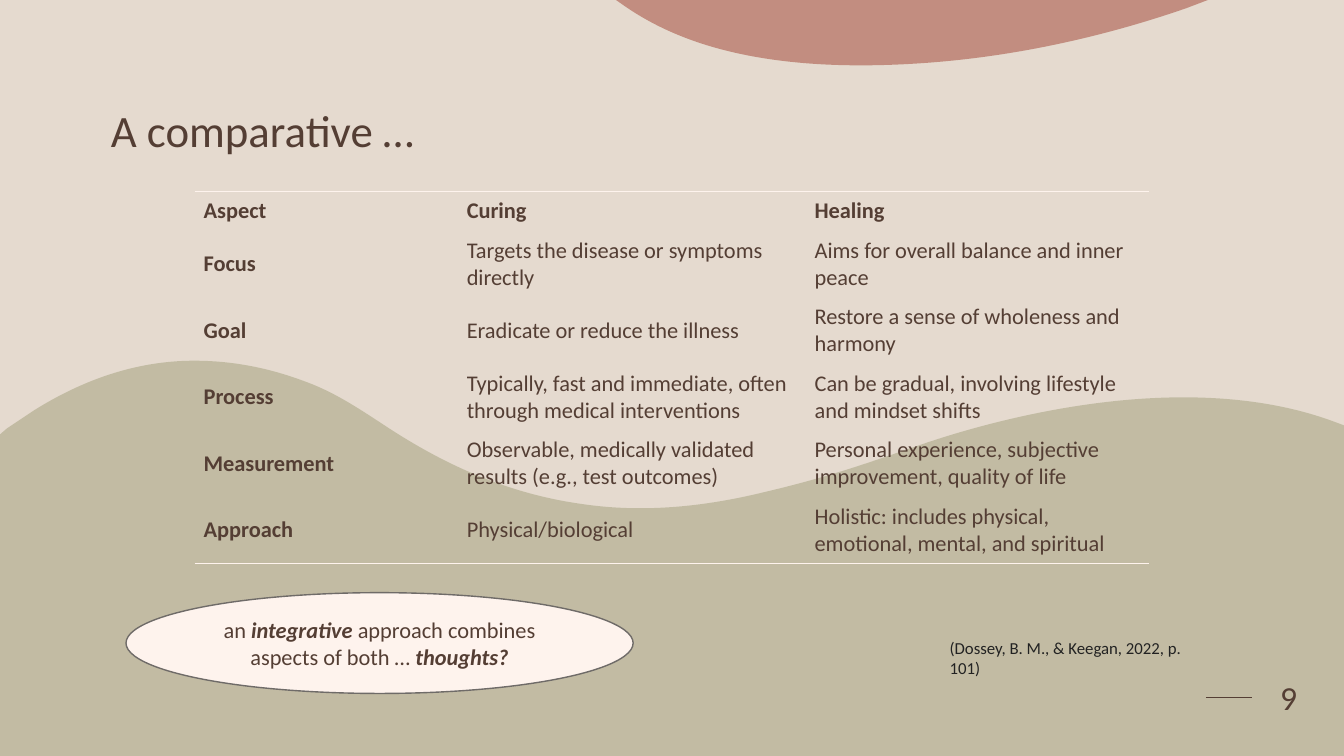
from lxml import etree
from pptx import Presentation
from pptx.dml.color import RGBColor
from pptx.enum.shapes import MSO_CONNECTOR, MSO_SHAPE
from pptx.enum.text import MSO_ANCHOR, PP_ALIGN
from pptx.oxml.ns import qn
from pptx.util import Inches, Pt

LINE, OVAL = MSO_CONNECTOR.STRAIGHT, MSO_SHAPE.OVAL
MIDDLE, BOTTOM = MSO_ANCHOR.MIDDLE, MSO_ANCHOR.BOTTOM
LEFT, CENTER = PP_ALIGN.LEFT, PP_ALIGN.CENTER

SAND = RGBColor(0xE5, 0xDA, 0xCF)
OLIVE = RGBColor(0xA0, 0x9D, 0x79)
CLAY = RGBColor(0xAC, 0x5B, 0x4C)
BROWN = RGBColor(0x54, 0x3E, 0x34)
CREAM = RGBColor(0xFE, 0xF3, 0xED)
GREY = RGBColor(0x6F, 0x6B, 0x68)
INK = RGBColor(0x22, 0x22, 0x22)

FONT = "Calibri"
NO_STYLE = "{2D5ABB26-0587-4C30-8999-92F81FD0307C}"

# Outlines in inches from the box corner: one point is a line, three a curve
WAVE = [
    [(2.02, 0)],
    [(2.36, 0.01), (2.7, 0.08), (3.04, 0.21)],
    [(3.34, 0.32), (3.6, 0.5), (3.86, 0.67)],
    [(4.43, 1.04), (5.05, 1.32), (5.77, 1.42)],
    [(6.37, 1.51), (6.98, 1.45), (7.59, 1.3)],
    [(8.27, 1.14), (8.67, 0.99), (9.08, 0.85)],
    [(9.48, 0.71), (11.61, -0.01), (13.25, 0.61)],
    [(13.33, 0.64)], [(13.33, 3.92)], [(0, 3.92)], [(0, 0.73)], [(0.07, 0.67)],
    [(0.16, 0.61), (0.25, 0.55), (0.34, 0.49)],
    [(0.9, 0.14), (1.46, -0.02), (2.02, 0)],
]
BLOB = [
    [(0, 0)], [(5.87, 0)], [(5.66, 0.08)],
    [(4.45, 0.5), (3.5, 0.59), (3.13, 0.62)],
    [(1.45, 0.75), (0.6, 0.41), (0.1, 0.07)],
]

COLUMNS = [2.61, 3.45, 3.41]
HEADER_HEIGHT, ROW_HEIGHT = 0.39, 0.66
ROWS = [
    ("Aspect", "Curing", "Healing"),
    ("Focus", "Targets the disease or symptoms directly",
     "Aims for overall balance and inner peace"),
    ("Goal", "Eradicate or reduce the illness",
     "Restore a sense of wholeness and harmony"),
    ("Process", "Typically, fast and immediate, often through medical interventions",
     "Can be gradual, involving lifestyle and mindset shifts"),
    ("Measurement", "Observable, medically validated results (e.g., test outcomes)",
     "Personal experience, subjective improvement, quality of life"),
    ("Approach", "Physical/biological",
     "Holistic: includes physical, emotional, mental, and spiritual"),
]


def add_run(p, text, size, color=BROWN, bold=False, italic=False):
    r = p.add_run()
    r.text = text
    r.font.name, r.font.size = FONT, Pt(size)
    r.font.bold, r.font.italic = bold, italic
    r.font.color.rgb = color


def add_text(s, box, text, size, color=BROWN):
    tf = s.shapes.add_textbox(*map(Inches, box)).text_frame
    tf.word_wrap = True
    add_run(tf.paragraphs[0], text, size, color)
    return tf


def add_outline(s, box, segments, color, opacity):
    left, top, width, height = map(Inches, box)
    ends = [(left + Inches(x), top + Inches(y)) for x, y in (seg[-1] for seg in segments)]
    builder = s.shapes.build_freeform(*ends[0])
    builder.add_line_segments(ends[1:], close=True)
    sp = builder.convert_to_shape()
    sp.left, sp.top, sp.width, sp.height = left, top, width, height
    # Turn the three-point segments into curves
    drawing = sp._element.find(".//" + qn("a:path"))
    drawing.set("w", str(width))
    drawing.set("h", str(height))
    for segment, step in zip(segments, list(drawing)):
        if len(segment) == 3:
            curve = etree.Element(qn("a:cubicBezTo"))
            for x, y in segment:
                etree.SubElement(curve, qn("a:pt"), x=str(Inches(x)), y=str(Inches(y)))
            drawing.replace(step, curve)
    sp.shadow.inherit = False
    sp.line.fill.background()
    sp.fill.solid()
    sp.fill.fore_color.rgb = color
    srgb = sp._element.spPr.find(".//" + qn("a:srgbClr"))
    etree.SubElement(srgb, qn("a:alpha"), val=str(opacity * 1000))


def add_title(s, box, text):
    sp = s.shapes.title
    sp.left, sp.top, sp.width, sp.height = map(Inches, box)
    tf = sp.text_frame
    tf.vertical_anchor = BOTTOM
    p = tf.paragraphs[0]
    p.alignment, p.line_spacing = LEFT, 0.9
    add_run(p, text, 32)


def add_border(cell, side):
    ln = etree.Element(qn("a:" + side), w=str(Pt(1)))
    fill = etree.SubElement(ln, qn("a:solidFill"))
    etree.SubElement(fill, qn("a:srgbClr"), val=str(CREAM))
    cell._tc.get_or_add_tcPr().insert(0, ln)


def add_comparison(s, left, top):
    heights = [HEADER_HEIGHT] + [ROW_HEIGHT] * (len(ROWS) - 1)
    box = map(Inches, (left, top, sum(COLUMNS), sum(heights)))
    table = s.shapes.add_table(len(ROWS), len(COLUMNS), *box).table
    table._tbl.tblPr.find(qn("a:tableStyleId")).text = NO_STYLE
    table.first_row = table.horz_banding = False
    for column, width in zip(table.columns, COLUMNS):
        column.width = Inches(width)
    for i, texts in enumerate(ROWS):
        table.rows[i].height = Inches(heights[i])
        for j, text in enumerate(texts):
            cell = table.cell(i, j)
            cell.fill.background()
            cell.vertical_anchor = MIDDLE
            cell.margin_left = cell.margin_right = Inches(0.09)
            cell.margin_top = cell.margin_bottom = Inches(0.04)
            add_run(cell.text_frame.paragraphs[0], text, 16, bold=i == 0 or j == 0)
            if i == 0:
                add_border(cell, "lnT")
            if i == len(ROWS) - 1:
                add_border(cell, "lnB")


def add_question(s, box):
    sp = s.shapes.add_shape(OVAL, *map(Inches, box))
    sp.shadow.inherit = False
    sp.fill.solid()
    sp.fill.fore_color.rgb = CREAM
    sp.line.color.rgb, sp.line.width = GREY, Pt(1)
    tf = sp.text_frame
    tf.word_wrap, tf.vertical_anchor = True, MIDDLE
    p = tf.paragraphs[0]
    p.alignment = CENTER
    for text, strong in (("an ", False), ("integrative", True),
                         (" approach combines aspects of both … ", False),
                         ("thoughts?", True)):
        add_run(p, text, 16, bold=strong, italic=strong)


def add_page_number(s, box, number):
    # Short rule to the left of the number
    left, top, _, height = box
    y = Inches(top + height / 2)
    rule = s.shapes.add_connector(LINE, Inches(left - 0.46), y, Inches(left), y)
    rule.line.color.rgb, rule.line.width = BROWN, Pt(1.25)
    etree.SubElement(rule._element.spPr, qn("a:effectLst"))
    # Number
    tf = add_text(s, box, number, 24)
    tf.vertical_anchor = MIDDLE
    tf.paragraphs[0].alignment = CENTER
    tf.paragraphs[0].space_after = Pt(6)


def build_slide(prs):
    s = prs.slides.add_slide(prs.slide_layouts[5])
    s.background.fill.solid()
    s.background.fill.fore_color.rgb = SAND
    # Background waves
    add_outline(s, (0, 3.58, 13.33, 3.92), WAVE, OLIVE, 50)
    add_outline(s, (6.11, 0, 5.87, 0.65), BLOB, CLAY, 60)
    # Content
    add_title(s, (1, 0.61, 11.33, 1), "A comparative …")
    add_comparison(s, 1.93, 1.9)
    add_question(s, (1.25, 5.88, 5.03, 1))
    # Footer
    add_text(s, (9.32, 6.28, 2.74, 0.3), "(Dossey, B. M., & Keegan, 2022, p. 101)", 12, INK)
    add_page_number(s, (12.42, 6.43, 0.72, 0.98), "9")


def main():
    prs = Presentation()
    prs.slide_width, prs.slide_height = Inches(13.33), Inches(7.5)
    build_slide(prs)
    prs.save("out.pptx")


if __name__ == "__main__":
    main()
